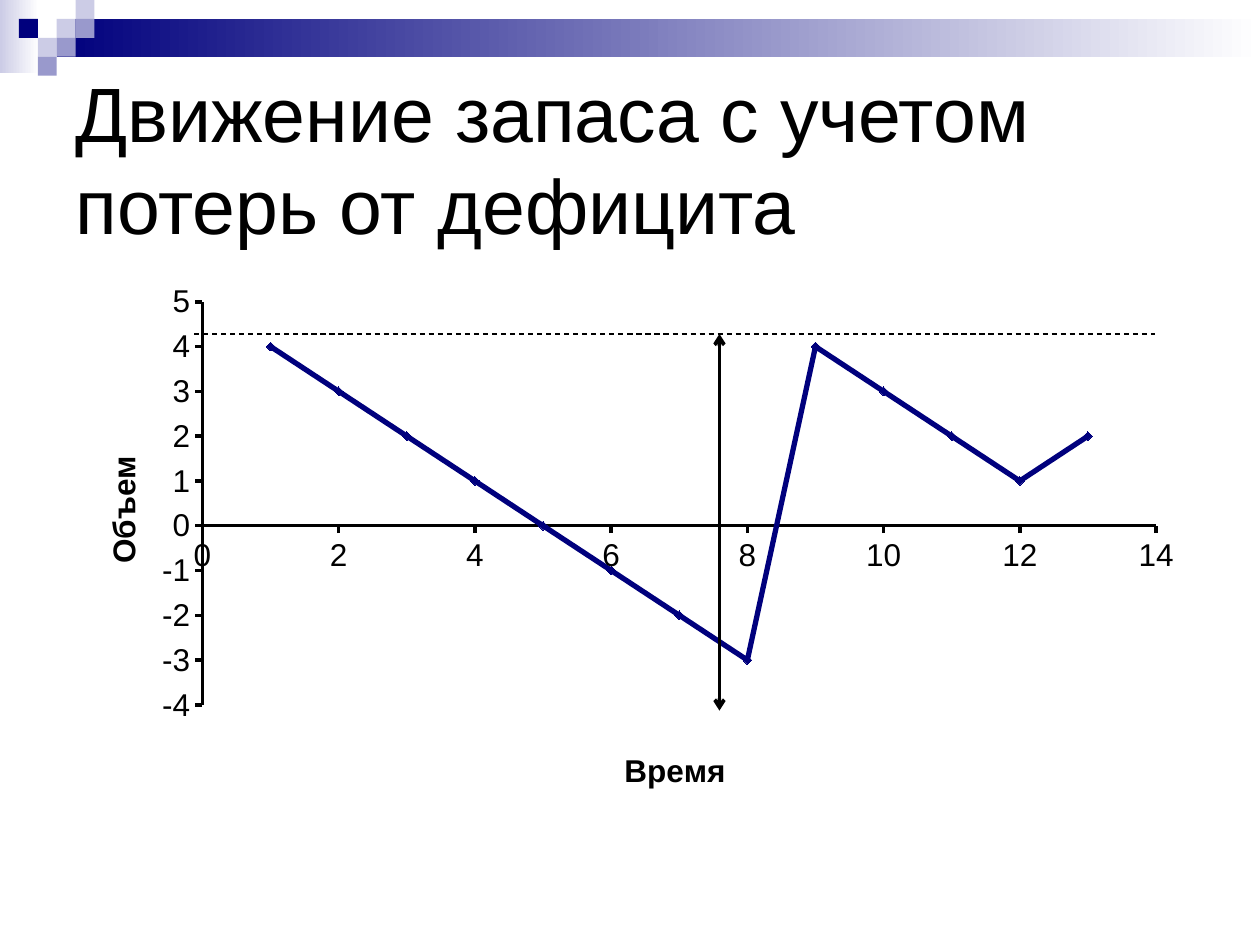
from typing import NamedTuple

from lxml import etree
from pptx import Presentation
from pptx.chart.data import XyChartData
from pptx.dml.color import RGBColor
from pptx.enum.chart import XL_CHART_TYPE as ChartType, XL_MARKER_STYLE as Marker
from pptx.enum.chart import XL_TICK_MARK as Tick
from pptx.enum.dml import MSO_LINE as Dash
from pptx.enum.shapes import MSO_CONNECTOR as Connector, MSO_SHAPE as Shape
from pptx.enum.text import MSO_ANCHOR as Anchor
from pptx.oxml.ns import qn
from pptx.util import Inches, Pt

NAVY, VIOLET, LILAC = "00007D", "9999CC", "CCCCE6"
BLACK, WHITE = "000000", "FFFFFF"
FONT = "Arial"
TILE = 0.15


class Band(NamedTuple):
    left: float
    top: float
    width: float
    height: float
    start: str
    end: str


class Tile(NamedTuple):
    column: int
    row: int
    color: str


class Guide(NamedTuple):
    x1: float
    y1: float
    x2: float
    y2: float
    weight: float
    dashed: bool = False
    arrows: bool = False


class Scale(NamedTuple):
    title: str
    low: int
    high: int
    step: int
    title_x: float
    title_y: float


BANDS = [
    Band(0, 0, 0.31, 0.58, LILAC, WHITE),
    Band(0.45, 0.15, 9.55, 0.3, NAVY, WHITE),
]
TILES = [
    Tile(3, 1, LILAC), Tile(4, 0, LILAC), Tile(4, 1, VIOLET), Tile(2, 2, LILAC),
    Tile(1, 1, NAVY), Tile(3, 2, VIOLET), Tile(2, 3, VIOLET),
]
GUIDES = [
    Guide(1.54, 2.65, 9.17, 2.65, 0.75, dashed=True),
    Guide(5.71, 2.65, 5.71, 5.64, 2, arrows=True),
]
TIME = Scale("Время", 0, 14, 2, 0.49, 0.88)
VOLUME = Scale("Объем", -4, 5, 1, 0.03, 0.33)
STOCK = [4, 3, 2, 1, 0, -1, -2, -3, 4, 3, 2, 1, 2]


def rgb(color: str) -> RGBColor:
    return RGBColor.from_string(color)


def set_font(font, **extra) -> None:
    for name, value in {"name": FONT, "size": Pt(18), "bold": False, **extra}.items():
        setattr(font, name, value)
    font.color.rgb = rgb(BLACK)


def add_block(slide, left: float, top: float, width: float, height: float):
    block = slide.shapes.add_shape(
        Shape.RECTANGLE, Inches(left), Inches(top), Inches(width), Inches(height))
    block.shadow.inherit = False
    block.line.fill.background()
    return block


def add_band(slide, band: Band) -> None:
    fill = add_block(slide, *band[:4]).fill
    fill.gradient()
    fill.gradient_angle = 0
    for stop, color, position in zip(fill.gradient_stops, (band.start, band.end), (0, 1)):
        stop.color.rgb = rgb(color)
        stop.position = position


def add_tile(slide, tile: Tile) -> None:
    fill = add_block(slide, tile.column * TILE, tile.row * TILE, TILE, TILE).fill
    fill.solid()
    fill.fore_color.rgb = rgb(tile.color)


def add_heading(slide, text: str) -> None:
    frame = slide.shapes.add_textbox(
        Inches(0.5), Inches(0.5), Inches(9), Inches(1.5)).text_frame
    frame.word_wrap = True
    frame.vertical_anchor = Anchor.MIDDLE
    run = frame.paragraphs[0].add_run()
    run.text = text
    set_font(run.font, size=Pt(44))


def place(parent, index: int, **values) -> None:
    """Give a chart part a manual layout, in fractions of the chart."""
    for old in parent.findall(qn("c:layout")):
        parent.remove(old)
    layout = etree.Element(qn("c:layout"))
    manual = etree.SubElement(layout, qn("c:manualLayout"))
    for tag, value in values.items():
        etree.SubElement(manual, qn(f"c:{tag}")).set("val", str(value))
    parent.insert(index, layout)


def format_axis(axis, scale: Scale) -> None:
    settings = {
        "minimum_scale": scale.low, "maximum_scale": scale.high, "major_unit": scale.step,
        "has_major_gridlines": False, "has_minor_gridlines": False,
        "major_tick_mark": Tick.OUTSIDE, "minor_tick_mark": Tick.NONE,
    }
    for name, value in settings.items():
        setattr(axis, name, value)
    axis.format.line.color.rgb = rgb(BLACK)
    axis.format.line.width = Pt(2)
    set_font(axis.tick_labels.font)
    run = axis.axis_title.text_frame.paragraphs[0].add_run()
    run.text = scale.title
    set_font(run.font, bold=True)
    place(axis.axis_title.element, 1, xMode="edge", yMode="edge",
          x=scale.title_x, y=scale.title_y)


def add_stock_chart(slide) -> None:
    data = XyChartData()
    points = data.add_series("Series 1")
    for time, volume in enumerate(STOCK, start=1):
        points.add_data_point(time, volume)
    chart = slide.shapes.add_chart(
        ChartType.XY_SCATTER_LINES, Inches(0.5), Inches(2.17), Inches(9), Inches(4.25),
        data).chart
    chart.has_legend = False
    chart.has_title = False
    set_font(chart.font)
    format_axis(chart.category_axis, TIME)
    format_axis(chart.value_axis, VOLUME)
    place(chart.element.find(".//" + qn("c:plotArea")), 0, layoutTarget="inner",
          xMode="edge", yMode="edge", x=0.123, y=0.053, w=0.841, h=0.753)

    chart.plots[0].vary_by_categories = False
    stock = chart.plots[0].series[0]
    stock.smooth = False
    stock.format.line.color.rgb = rgb(NAVY)
    stock.format.line.width = Pt(3)
    stock.marker.style = Marker.DIAMOND
    stock.marker.size = 5
    stock.marker.format.fill.solid()
    stock.marker.format.fill.fore_color.rgb = rgb(NAVY)
    stock.marker.format.line.color.rgb = rgb(NAVY)


def add_guide(slide, guide: Guide) -> None:
    connector = slide.shapes.add_connector(
        Connector.STRAIGHT, *(Inches(length) for length in guide[:4]))
    line = connector.line
    line.color.rgb = rgb(BLACK)
    line.width = Pt(guide.weight)
    if guide.dashed:
        line.dash_style = Dash.DASH
    if guide.arrows:
        outline = connector.element.spPr.find(qn("a:ln"))
        for end in ("a:headEnd", "a:tailEnd"):
            etree.SubElement(outline, qn(end)).set("type", "arrow")
    etree.SubElement(connector.element.spPr, qn("a:effectLst"))


def main() -> None:
    deck = Presentation()
    deck.slide_width, deck.slide_height = Inches(10), Inches(7.5)
    slide = deck.slides.add_slide(deck.slide_layouts[6])

    # Header decoration
    for band in BANDS:
        add_band(slide, band)
    for tile in TILES:
        add_tile(slide, tile)

    # Heading, chart and its guide lines
    add_heading(slide, "Движение запаса с учетом потерь от дефицита")
    add_stock_chart(slide)
    for guide in GUIDES:
        add_guide(slide, guide)

    deck.save("out.pptx")


if __name__ == "__main__":
    main()
